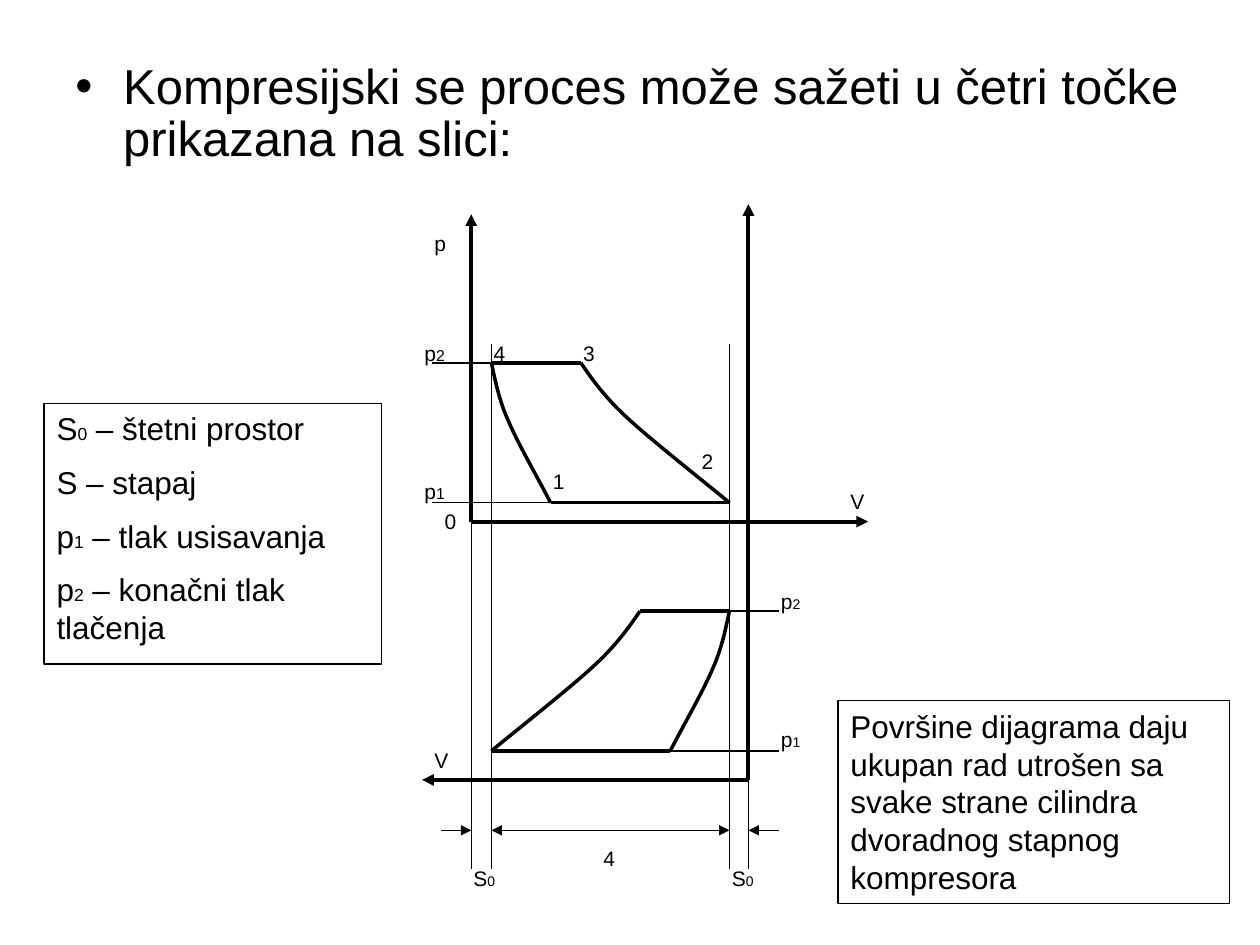
from lxml import etree
from pptx import Presentation
from pptx import util as u
from pptx.dml.color import RGBColor
from pptx.enum import shapes, text
from pptx.oxml.ns import qn

INK = {"black": "000000", "white": "FFFFFF"}
FONT = "Arial"
CLEAR, SWEPT, END = 3.9, 5.79, 6.9
LEFT, RIGHT = 3.74, 5.94
HIGH, LOW, DROP = 2.88, 3.99, 1.97
ZERO, BASE, SIZE_Y = 4.14, 6.19, 6.59
THIN, BOLD, AXIS = 0.75, 2, 2.25


def tint(name):
    return RGBColor.from_string(INK[name])


def stroke(shape, width):
    shape.line.color.rgb = tint("black")
    shape.line.width = u.Pt(width)


def add_line(slide, start, end, width=THIN, head=False, tail=False):
    line = slide.shapes.add_connector(
        shapes.MSO_CONNECTOR.STRAIGHT, *map(u.Inches, start + end))
    stroke(line, width)
    for tag, wanted in (("a:headEnd", head), ("a:tailEnd", tail)):
        if wanted:
            etree.SubElement(line.line._get_or_add_ln(), qn(tag), type="triangle")
    etree.SubElement(line._element.spPr, qn("a:effectLst"))


def bezier(a, b, c, d, steps=12):
    for i in range(1, steps + 1):
        t = i / steps
        s = 1 - t
        yield tuple(s**3 * p + 3 * s * s * t * q + 3 * s * t * t * r + t**3 * v
                    for p, q, r, v in zip(a, b, c, d))


def add_curve(slide, knots):
    points = [knots[0]]
    for i in range(0, len(knots) - 1, 3):
        points += bezier(*knots[i:i + 4])
    points = [(u.Inches(x), u.Inches(y)) for x, y in points]
    build = slide.shapes.build_freeform(*points[0])
    build.add_line_segments(points[1:], close=False)
    curve = build.convert_to_shape()
    curve.fill.background()
    stroke(curve, BOLD)
    curve.shadow.inherit = False


def add_text(slide, words, left, top, width, height, size=12, sub=9,
             wrap=False, frame=False, bullet=False, before=0, lead=1.0):
    area = [u.Inches(n) for n in (left, top, width, height)]
    if frame:
        box = slide.shapes.add_shape(shapes.MSO_SHAPE.RECTANGLE, *area)
        box.fill.solid()
        box.fill.fore_color.rgb = tint("white")
        stroke(box, THIN)
        box.shadow.inherit = False
    else:
        box = slide.shapes.add_textbox(*area)
    body = box.text_frame
    body.word_wrap = wrap
    body.vertical_anchor = text.MSO_ANCHOR.TOP
    for i, part in enumerate(words.split("\n")):
        para = body.add_paragraph() if i else body.paragraphs[0]
        para.alignment = text.PP_ALIGN.LEFT
        para.space_before = u.Pt(before)
        para.line_spacing = lead
        if bullet:
            props = para._p.get_or_add_pPr()
            props.set("marL", str(u.Inches(0.38)))
            props.set("indent", str(u.Inches(-0.38)))
            etree.SubElement(props, qn("a:buFont"), typeface=FONT)
            etree.SubElement(props, qn("a:buChar"), char="•")
        first, *rest = part.split("_")
        runs = [(first, size)]
        for piece in rest:
            runs += [(piece[0], sub), (piece[1:], size)]
        for word, points in runs:
            if word:
                run = para.add_run()
                run.text = word
                run.font.name = FONT
                run.font.size = u.Pt(points)
                run.font.color.rgb = tint("black")


def add_cycle(slide, place):
    curves = (
        [(CLEAR, HIGH), (3.92, 2.96), (3.95, 3.15), (4.03, 3.33),
         (4.11, 3.52), (4.3, 3.85), (4.37, LOW)],
        [(4.61, HIGH), (4.66, 2.95), (4.76, 3.11), (4.95, 3.29),
         (5.15, 3.48), (5.61, 3.84), (SWEPT, LOW)],
    )
    for knots in curves:
        add_curve(slide, [place(*knot) for knot in knots])
    for start, end, y in ((CLEAR, 4.61, HIGH), (4.37, SWEPT, LOW)):
        add_line(slide, place(start, y), place(end, y), BOLD)


def mirror(x, y):
    return CLEAR + SWEPT - x, y + DROP


def add_axes(slide):
    for start, end in (
        ((LEFT, ZERO), (LEFT, 1.7)),
        ((LEFT, ZERO), (6.89, ZERO)),
        ((RIGHT, BASE), (RIGHT, 1.62)),
        ((RIGHT, BASE), (3.35, BASE)),
    ):
        add_line(slide, start, end, AXIS, tail=True)


def add_guides(slide):
    for x, top in ((CLEAR, 2.73), (SWEPT, 2.73), (LEFT, ZERO), (RIGHT, BASE)):
        add_line(slide, (x, top), (x, END))
    for start, end, y in (
        (3.43, CLEAR, HIGH), (3.43, 4.37, LOW),
        (SWEPT, 6.18, HIGH + DROP), (5.32, 6.18, LOW + DROP),
    ):
        add_line(slide, (start, y), (end, y))
    add_line(slide, (CLEAR, SIZE_Y), (SWEPT, SIZE_Y), head=True, tail=True)
    for start, end in ((3.5, LEFT), (6.18, RIGHT)):
        add_line(slide, (start, SIZE_Y), (end, SIZE_Y), tail=True)


def add_labels(slide):
    for word, left, top in (
        ("4", 3.82, 2.65), ("3", 4.53, 2.65), ("1", 4.29, 3.67),
        ("2", 5.47, 3.51), ("p", 3.35, 1.78), ("0", 3.43, 3.99),
        ("4", 4.69, 6.66), ("V", 6.65, 3.83), ("V", 3.35, 5.88),
    ):
        add_text(slide, word, left, top, 0.3, 0.3)
    for word, left, top, sub in (
        ("p_2", 3.27, 2.65, 9), ("p_1", 3.27, 3.75, 9),
        ("p_2", 6.1, 4.62, 8), ("p_1", 6.1, 5.72, 8),
        ("S_0", 3.66, 6.82, 8), ("S_0", 5.71, 6.82, 8),
    ):
        add_text(slide, word, left, top, 0.37, 0.3, sub=sub)


def main():
    deck = Presentation()
    deck.slide_width, deck.slide_height = u.Inches(10), u.Inches(7.5)
    slide = deck.slides.add_slide(deck.slide_layouts[6])
    add_text(slide, "Kompresijski se proces može sažeti u četri točke prikazana na slici:",
             0.5, 0.44, 9, 1.02, size=28, wrap=True, bullet=True, before=5.6, lead=0.9)
    add_axes(slide)
    add_cycle(slide, lambda x, y: (x, y))
    add_cycle(slide, mirror)
    add_guides(slide)
    add_labels(slide)
    note = dict(size=18, sub=10, wrap=True, frame=True, before=9)
    add_text(slide, "S_0 – štetni prostor\nS – stapaj\np_1 – tlak usisavanja\n"
             "p_2 – konačni tlak tlačenja", 0.35, 3.2, 2.68, 2.07, **note)
    add_text(slide, "Površine dijagrama daju ukupan rad utrošen sa svake strane "
             "cilindra dvoradnog stapnog kompresora", 6.65, 5.56, 3.11, 1.61, **note)
    deck.save("out.pptx")


if __name__ == "__main__":
    main()
